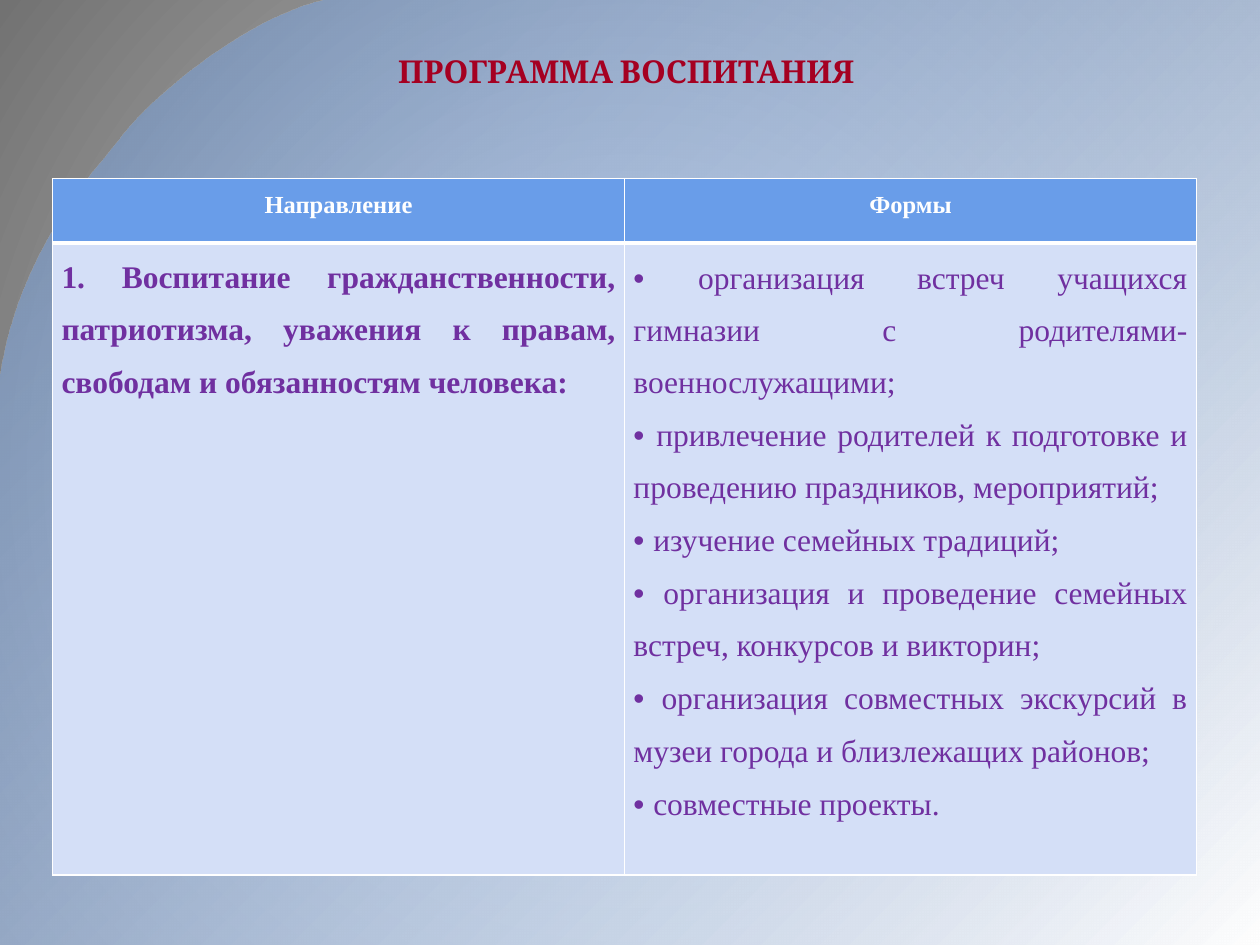
import lxml.etree
import pptx
import pptx.dml.color
import pptx.enum.text
import pptx.oxml.ns
import pptx.util
from pptx.util import Cm

SERIF = "Times New Roman"
ALIGN = pptx.enum.text.PP_ALIGN
ANCHOR = pptx.enum.text.MSO_ANCHOR
HEADINGS = ["Направление", "Формы"]
DIRECTION = (
    "1. Воспитание гражданственности, патриотизма, уважения к правам, "
    "свободам и обязанностям человека:"
)
FORMS = [
    "организация встреч учащихся гимназии с родителями-военнослужащими;",
    "привлечение родителей к подготовке и проведению праздников, мероприятий;",
    "изучение семейных традиций;",
    "организация и проведение семейных встреч, конкурсов и викторин;",
    "организация совместных экскурсий в музеи города и близлежащих районов;",
    "совместные проекты.",
]


def color(value):
    """Turn a hex string into a colour."""
    return pptx.dml.color.RGBColor.from_string(value)


def add_element(parent, tag, **attributes):
    """Append a drawing element to its parent."""
    return lxml.etree.SubElement(parent, pptx.oxml.ns.qn(tag), attributes)


def set_gradient(fill, first, last):
    """Give a fill a gradient between two colours."""
    fill.gradient()
    for stop, value, position in zip(fill.gradient_stops, (first, last), (0, 1)):
        stop.color.rgb = color(value)
        stop.position = position


def add_run(paragraph, text, size, value, font=SERIF, bold=False):
    """Add one formatted run to a paragraph."""
    run = paragraph.add_run()
    run.text = text
    run.font.size = pptx.util.Pt(size)
    run.font.name = font
    run.font.bold = bold
    run.font.color.rgb = color(value)


def curve_points(start, control_1, control_2, end, steps=24):
    """Return points along a cubic curve, without its start."""
    points = []
    for step in range(1, steps + 1):
        t = step / steps
        weights = ((1 - t) ** 3, 3 * t * (1 - t) ** 2, 3 * t * t * (1 - t), t ** 3)
        pairs = zip(start, control_1, control_2, end)
        points.append(tuple(sum(w * c for w, c in zip(weights, axis)) for axis in pairs))
    return points


def add_background(slide, left, top, width, height):
    """Paint the grey backdrop and the curved blue sheet over it."""
    set_gradient(slide.background.fill, "CFCFCF", "727272")
    gradient = slide.element.find(".//" + pptx.oxml.ns.qn("a:gradFill"))
    gradient.remove(gradient.find(pptx.oxml.ns.qn("a:lin")))
    circle = add_element(gradient, "a:path", path="circle")
    add_element(circle, "a:fillToRect", l="50000", t="50000", r="50000", b="50000")

    start, middle, end = (6.55, 0), (2.49, 2.72), (0, 7.65)
    points = curve_points(start, (4.83, 0.41), (2.95, 2.11), middle)
    points += curve_points(middle, (2.03, 3.35), (0.41, 4.93), end)
    outline = [(left + Cm(x), top + Cm(y)) for x, y in points]
    outline += [(left, top + height), (left + width, top + height), (left + width, top)]
    builder = slide.shapes.build_freeform(left + Cm(start[0]), top)
    builder.add_line_segments(outline, close=True)
    sheet = builder.convert_to_shape()
    sheet.shadow.inherit = False
    sheet.line.fill.background()
    set_gradient(sheet.fill, "699DE9", "FFFFFF")
    sheet.fill.gradient_angle = 315
    first_color = sheet.element.find(".//" + pptx.oxml.ns.qn("a:srgbClr"))
    add_element(first_color, "a:alpha", val="39000")


def add_title(slide, left, top, width, height):
    """Place the centred title."""
    frame = slide.shapes.add_textbox(left, top, width, height).text_frame
    frame.word_wrap = True
    frame.vertical_anchor = ANCHOR.MIDDLE
    paragraph = frame.paragraphs[0]
    paragraph.alignment = ALIGN.CENTER
    add_run(paragraph, "ПРОГРАММА ВОСПИТАНИЯ ", 18, "A50021", "Cambria", True)


def style_cell(cell, fill, top_width, bottom_width):
    """Set the margins, white borders and fill of a cell."""
    cell.margin_left = cell.margin_right = Cm(0.18)
    cell.margin_top = cell.margin_bottom = 0
    properties = cell._tc.get_or_add_tcPr()
    widths = {"L": 1, "R": 1, "T": top_width, "B": bottom_width}
    for side, points in widths.items():
        border = add_element(properties, "a:ln" + side, w=str(pptx.util.Pt(points)))
        solid = add_element(border, "a:solidFill")
        add_element(solid, "a:srgbClr", val="FFFFFF")
    cell.fill.solid()
    cell.fill.fore_color.rgb = color(fill)


def add_cell_paragraph(cell, index, alignment):
    """Return the first or a new paragraph of a cell, spaced by one and a half."""
    frame = cell.text_frame
    paragraph = frame.add_paragraph() if index else frame.paragraphs[0]
    paragraph.alignment = alignment
    paragraph.line_spacing = 1.5
    return paragraph


def add_program_table(slide, left, top, width, height):
    """Place the table of directions and forms."""
    table = slide.shapes.add_table(2, 2, left, top, width, height).table
    header_height = Cm(1.3)
    table.rows[0].height = header_height
    table.rows[1].height = height - header_height
    for column, heading in enumerate(HEADINGS):
        table.columns[column].width = width // 2
        header = table.cell(0, column)
        style_cell(header, "699DE9", 1, 3)
        paragraph = add_cell_paragraph(header, 0, ALIGN.CENTER)
        add_run(paragraph, heading, 14, "FFFFFF", bold=True)
        style_cell(table.cell(1, column), "D4DFF7", 3, 1)

    paragraph = add_cell_paragraph(table.cell(1, 0), 0, ALIGN.JUSTIFY)
    add_run(paragraph, DIRECTION, 18, "7030A0", bold=True)
    for index, form in enumerate(FORMS):
        paragraph = add_cell_paragraph(table.cell(1, 1), index, ALIGN.JUSTIFY)
        add_run(paragraph, "• ", 18, "7030A0", "Arial")
        add_run(paragraph, form, 18, "7030A0")


def main():
    """Build the slide and save it."""
    presentation = pptx.Presentation()
    presentation.slide_width = Cm(25.4)
    presentation.slide_height = Cm(19.05)
    slide = presentation.slides.add_slide(presentation.slide_layouts[6])
    add_background(slide, 0, 0, presentation.slide_width, presentation.slide_height)
    add_title(slide, Cm(1.27), Cm(0.64), Cm(22.86), Cm(1.57))
    add_program_table(slide, Cm(1.06), Cm(3.6), Cm(23.06), Cm(14.04))
    presentation.save("out.pptx")


if __name__ == "__main__":
    main()
